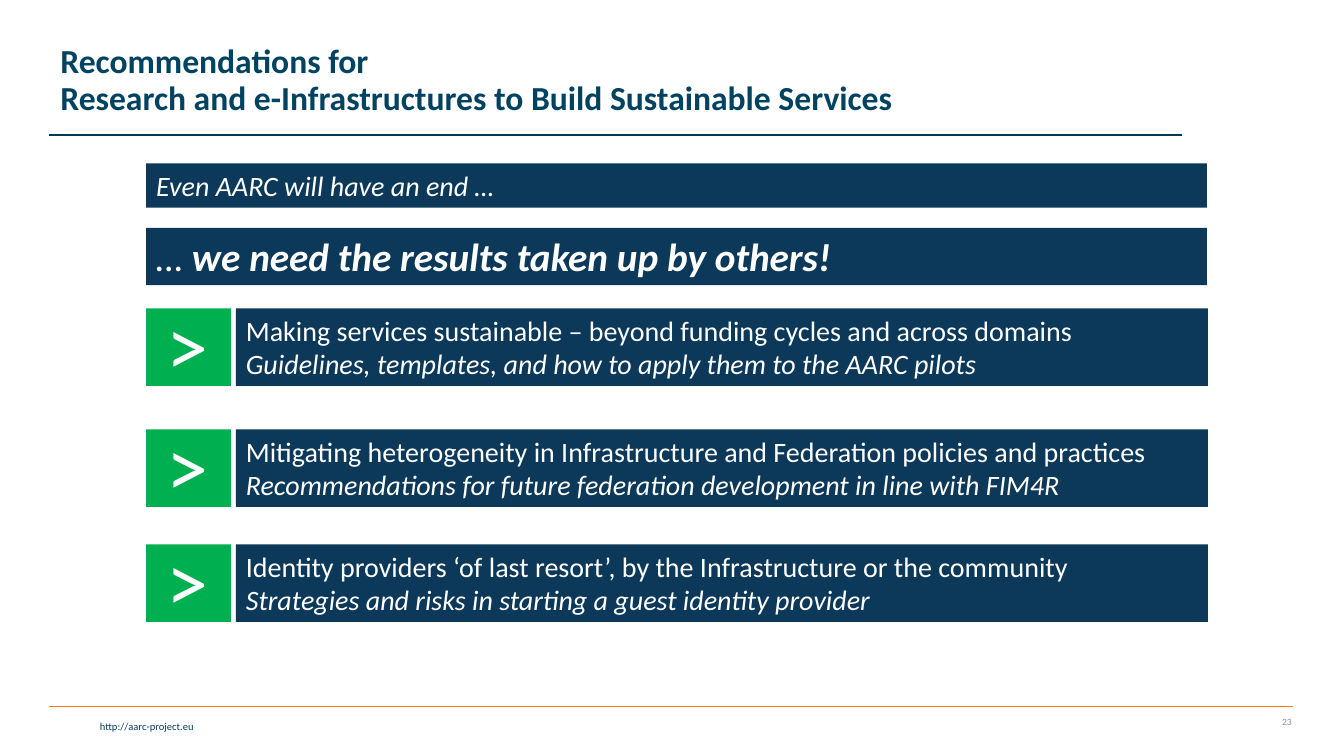
from lxml import etree
from pptx import Presentation
from pptx import util as u
from pptx.dml.color import RGBColor
from pptx.enum import shapes, text

PX = 9144
COLORS = {
    "navy": "0C3959", "green": "00B050", "white": "FFFFFF", "orange": "F57B20",
    "rule": "003959", "title": "004361", "link": "003F5E", "number": "8C8C8C",
}
RECOMMENDATIONS = [
    (306, "Making services sustainable – beyond funding cycles and across domains",
     "Guidelines, templates, and how to apply them to the AARC pilots"),
    (426, "Mitigating heterogeneity in Infrastructure and Federation policies and practices",
     "Recommendations for future federation development in line with FIM4R"),
    (540, "Identity providers ‘of last resort’, by the Infrastructure or the community",
     "Strategies and risks in starting a guest identity provider"),
]


def color(name):
    """Return the named colour."""
    return RGBColor.from_string(COLORS[name])


def px(*lengths):
    """Turn px lengths into EMU."""
    return [u.Emu(length * PX) for length in lengths]


def write(frame, lines, size, ink="white", align=text.PP_ALIGN.LEFT,
          anchor=text.MSO_ANCHOR.TOP, spacing=1.0):
    """Fill a frame with lines of (words, bold, italic) runs."""
    frame.word_wrap = True
    frame.vertical_anchor = anchor
    paragraph = frame.paragraphs[0]
    paragraph.alignment = align
    paragraph.line_spacing = spacing
    for index, line in enumerate(lines):
        if index:
            paragraph.add_line_break()
        for words, bold, italic in line:
            run = paragraph.add_run()
            run.text = words
            run.font.name = "Calibri"
            run.font.size = u.Pt(size)
            run.font.bold = bold
            run.font.italic = italic
            run.font.color.rgb = color(ink)


def add_label(slide, box, lines, size, ink, **layout):
    """Add a text box."""
    write(slide.shapes.add_textbox(*px(*box)).text_frame, lines, size, ink, **layout)


def add_bar(slide, box, fill, lines=(), size=20):
    """Add a filled rectangle with optional text."""
    bar = slide.shapes.add_shape(shapes.MSO_SHAPE.RECTANGLE, *px(*box))
    bar.shadow.inherit = False
    bar.fill.solid()
    bar.fill.fore_color.rgb = color(fill)
    bar.line.fill.background()
    if lines:
        write(bar.text_frame, lines, size)


def add_rule(slide, left, right, top, ink):
    """Add a thin horizontal line."""
    rule = slide.shapes.add_connector(
        shapes.MSO_CONNECTOR.STRAIGHT, *px(left, top, right, top))
    rule.line.color.rgb = color(ink)
    rule.line.width = u.Pt(1)
    properties = rule.element.spPr
    etree.SubElement(properties, properties.nsmap["a"].join("{}") + "effectLst")


def add_recommendation(slide, top, topic, detail):
    """Add a green arrow tile and its two-line bar."""
    add_bar(slide, (234, top, 964, 77), "navy",
            [[(topic, False, False)], [(detail, False, True)]])
    add_bar(slide, (145, top, 84, 77), "green")
    add_label(slide, (155, top - 21, 70, 111), [[("˃", False, False)]], 60, "white")


def main():
    """Build and save the slide."""
    deck = Presentation()
    deck.slide_width, deck.slide_height = px(1333, 750)
    slide = deck.slides.add_slide(deck.slide_layouts[6])
    right, middle = text.PP_ALIGN.RIGHT, text.MSO_ANCHOR.MIDDLE

    add_rule(slide, 49, 1282, 701, "orange")
    add_label(slide, (3, 709, 199, 23), [[("http://aarc-project.eu", False, False)]],
              7.5, "link", align=right)
    add_rule(slide, 49, 1172, 134, "rule")
    add_label(slide, (1210, 701, 81, 30), [[("23", False, False)]],
              6.8, "number", align=right, anchor=middle)
    add_label(slide, (50, 8, 1051, 145),
              [[("Recommendations for", True, False)],
               [("Research and e-Infrastructures to Build Sustainable Services", True, False)]],
              24, "title", anchor=middle, spacing=0.9)

    add_bar(slide, (145, 162, 1052, 44), "navy",
            [[("Even AARC will have an end …", False, True)]])
    add_bar(slide, (145, 226, 1052, 57), "navy",
            [[("…", False, True), (" we need the results taken up by others!", True, True)]], 28)
    for recommendation in RECOMMENDATIONS:
        add_recommendation(slide, *recommendation)
    deck.save("out.pptx")


if __name__ == "__main__":
    main()
